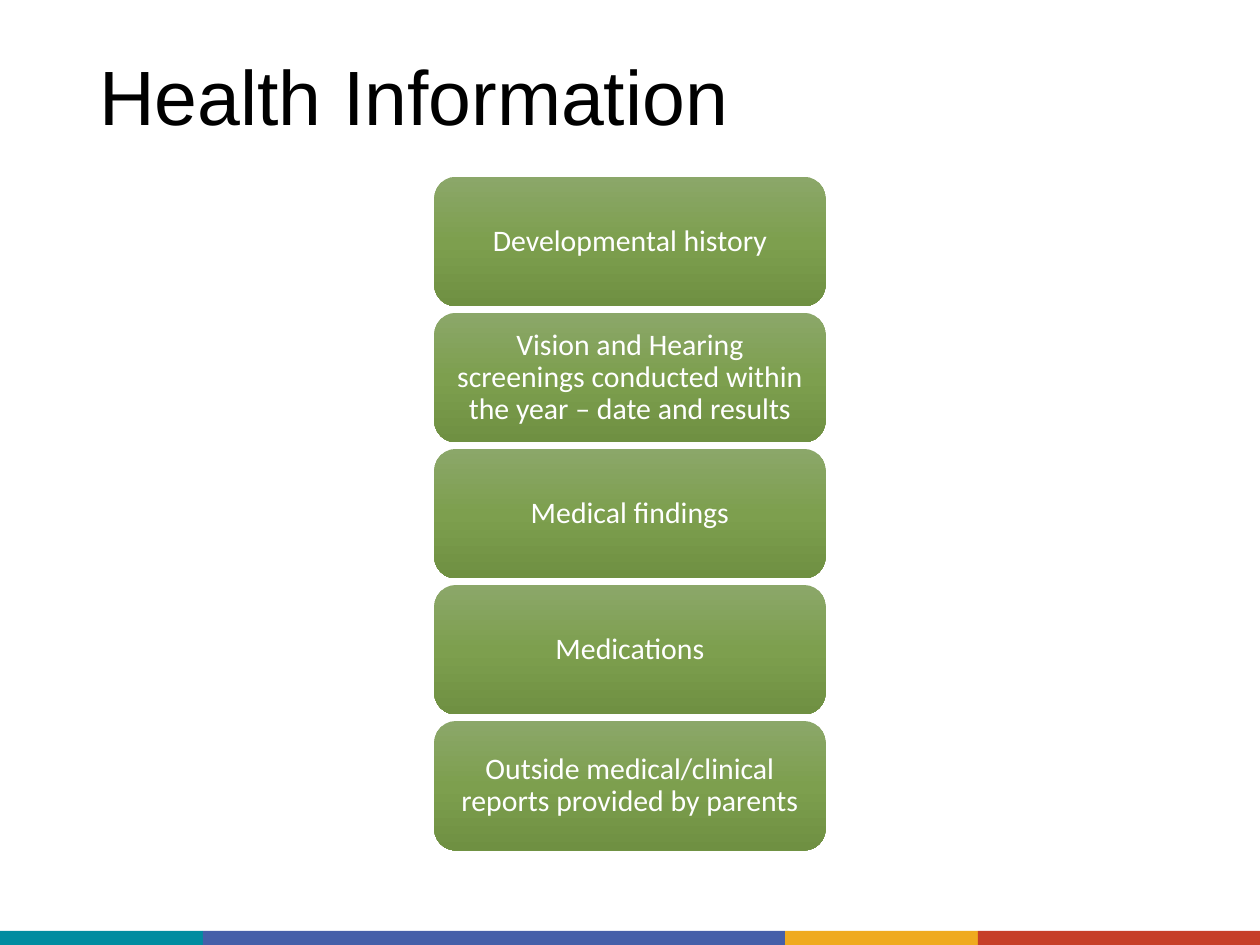
"""Build the Health Information slide: a title, a stack of cards and a footer band."""
from copy import deepcopy
from dataclasses import dataclass

from pptx import Presentation
from pptx import util as u
from pptx.dml.color import RGBColor
from pptx.enum import shapes, text

TITLE = "Health Information"
CARDS = [
    "Developmental history",
    "Vision and Hearing screenings conducted within the year – date and results",
    "Medical findings",
    "Medications",
    "Outside medical/clinical reports provided by parents",
]
BAND = [("008CA0", 116), ("455FA9", 332.6), ("EFAA1F", 110.2), ("C63F28", 161.2)]


@dataclass(frozen=True)
class Theme:
    title_font: str = "Arial"
    card_font: str = "Calibri"
    title_size: float = 44
    card_size: float = 17
    title_color: str = "000000"
    card_color: str = "FFFFFF"
    card_gradient: tuple = ("8BA769", "7D9F4E", "6F9042")


THEME = Theme()
SLIDE_WIDTH, SLIDE_HEIGHT = 720, 540
BAND_HEIGHT = 8
CARD_WIDTH, CARD_HEIGHT = 223.6, 74
CARD_TOP, CARD_PITCH = 101, 77.75


def write(shape, content, *, font, size, color, align, insets):
    frame = shape.text_frame
    frame.word_wrap = True
    frame.vertical_anchor = text.MSO_ANCHOR.MIDDLE
    frame.margin_left = frame.margin_right = u.Pt(insets[0])
    frame.margin_top = frame.margin_bottom = u.Pt(insets[1])
    paragraph = frame.paragraphs[0]
    paragraph.alignment = align
    paragraph.line_spacing = 0.9
    run = paragraph.add_run()
    run.text = content
    run.font.name = font
    run.font.size = u.Pt(size)
    run.font.color.rgb = RGBColor.from_string(color)


def add_block(slide, kind, left, top, width, height):
    shape = slide.shapes.add_shape(kind, *map(u.Pt, (left, top, width, height)))
    shape.shadow.inherit = False
    shape.line.fill.background()
    return shape


def fill_gradient(shape, colors):
    fill = shape.fill
    fill.gradient()
    fill.gradient_angle = 270
    stop_list = fill._fill._gradFill.gsLst
    stop_list.insert(1, deepcopy(stop_list[0]))
    for index, (stop, color) in enumerate(zip(fill.gradient_stops, colors)):
        stop.position = index / (len(colors) - 1)
        stop.color.rgb = RGBColor.from_string(color)


def add_band(slide):
    left = 0
    for color, width in BAND:
        block = add_block(slide, shapes.MSO_SHAPE.RECTANGLE,
                          left, SLIDE_HEIGHT - BAND_HEIGHT, width, BAND_HEIGHT)
        block.fill.solid()
        block.fill.fore_color.rgb = RGBColor.from_string(color)
        left += width


def add_cards(slide):
    left = (SLIDE_WIDTH - CARD_WIDTH) / 2
    for index, content in enumerate(CARDS):
        card = add_block(slide, shapes.MSO_SHAPE.ROUNDED_RECTANGLE,
                         left, CARD_TOP + index * CARD_PITCH, CARD_WIDTH, CARD_HEIGHT)
        fill_gradient(card, THEME.card_gradient)
        write(card, content, font=THEME.card_font, size=THEME.card_size,
              color=THEME.card_color, align=text.PP_ALIGN.CENTER, insets=(5, 3))


def main():
    presentation = Presentation()
    presentation.slide_width = u.Pt(SLIDE_WIDTH)
    presentation.slide_height = u.Pt(SLIDE_HEIGHT)
    slide = presentation.slides.add_slide(presentation.slide_layouts[6])
    add_band(slide)
    title = slide.shapes.add_textbox(*map(u.Pt, (49.7, 28.8, 620.6, 57.6)))
    write(title, TITLE, font=THEME.title_font, size=THEME.title_size,
          color=THEME.title_color, align=text.PP_ALIGN.LEFT, insets=(7.2, 3.6))
    add_cards(slide)
    presentation.save("out.pptx")


if __name__ == "__main__":
    main()
